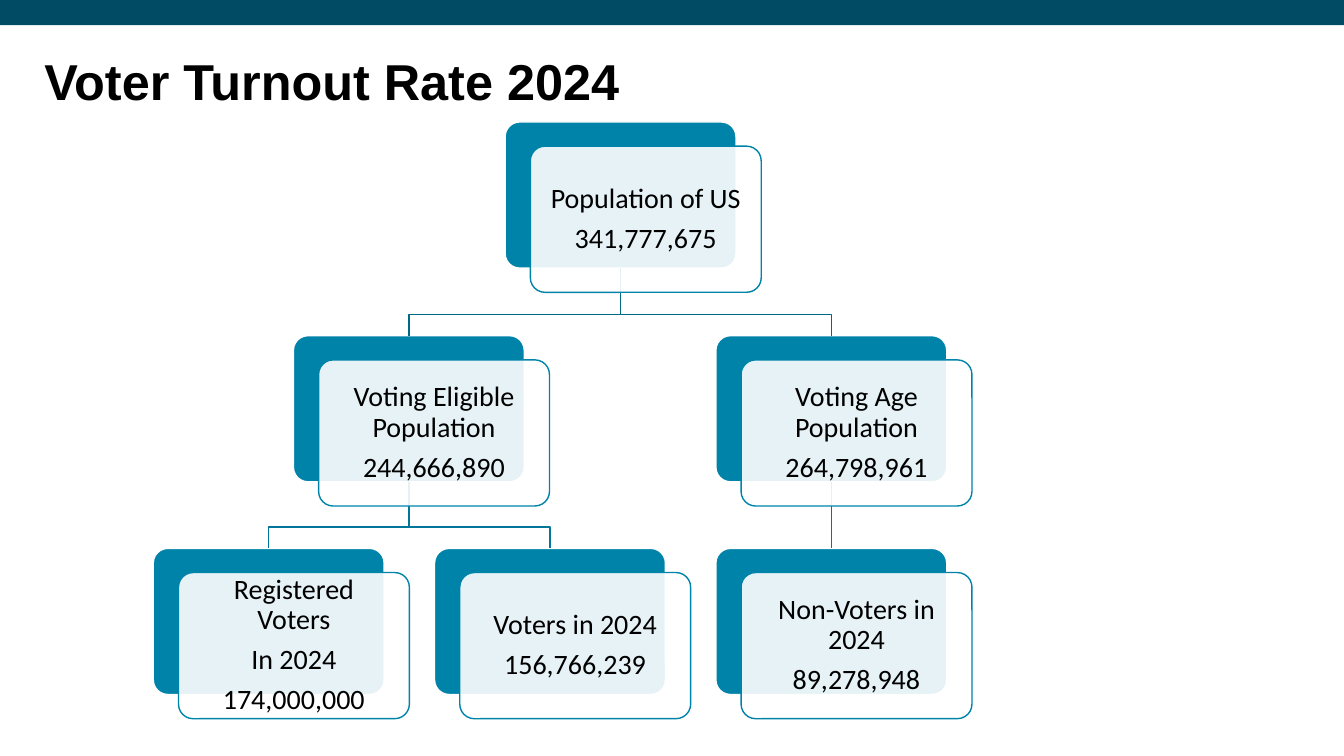
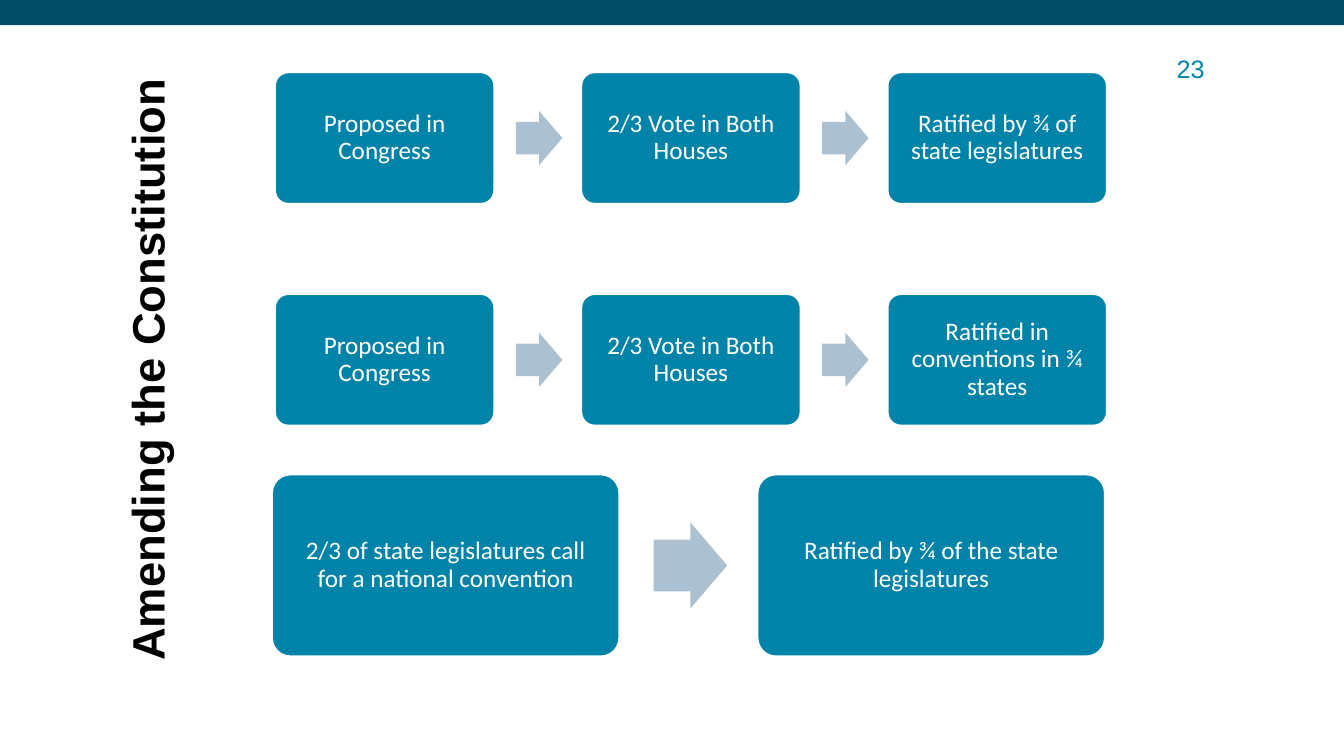
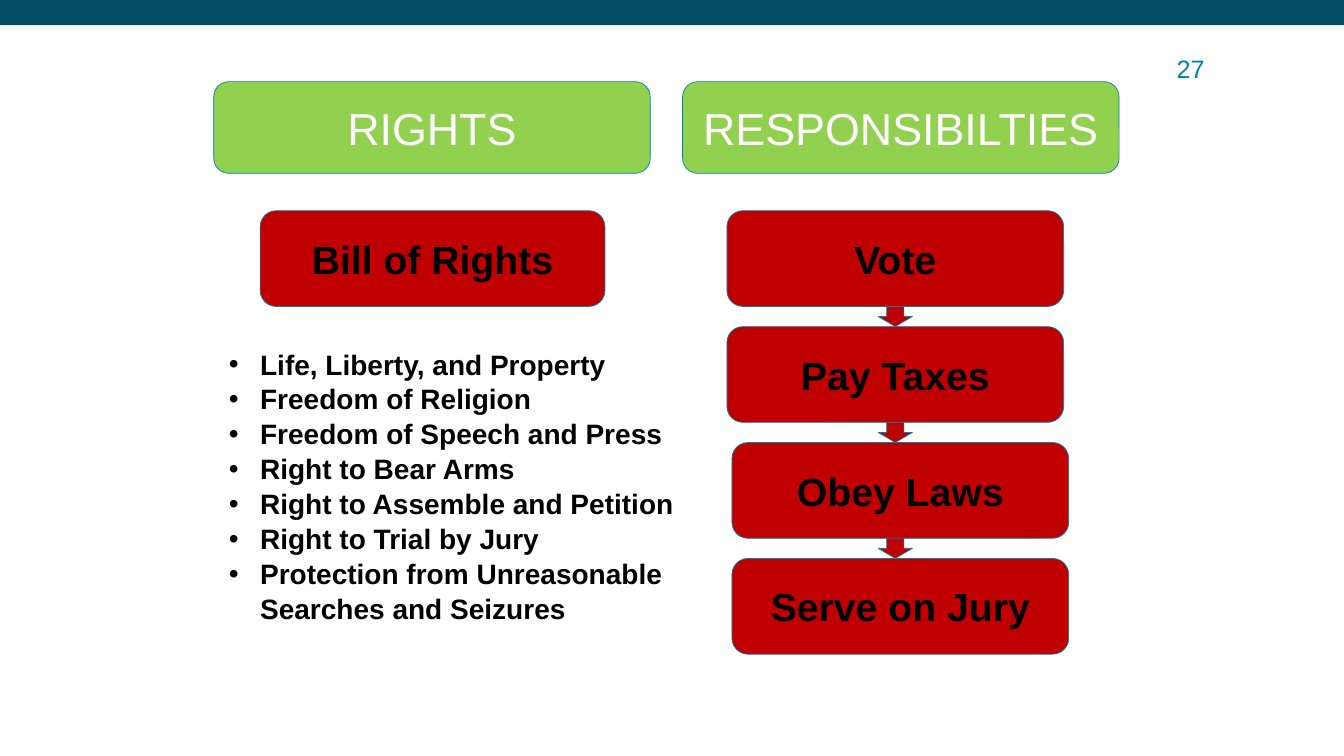
from lxml import etree
from pptx import Presentation
from pptx.dml.color import RGBColor
from pptx.enum import shapes as sh, text as tx
from pptx.oxml.ns import qn
from pptx.util import Inches, Pt

COLORS = {
    "band": "014B64", "teal": "0083A9", "number": "0084A9",
    "link_upper": "006987", "link_lower": "007799", "arrow": "ABC1D1",
    "green": "92D050", "red": "C00000", "white": "FFFFFF", "black": "000000",
}
ROUND = sh.MSO_SHAPE.ROUNDED_RECTANGLE
CENTER = tx.PP_ALIGN.CENTER


def rgb(name):
    return RGBColor.from_string(COLORS[name])


# Shared elements

def write(frame, lines, size, color="black", font="Arial", bold=False,
          align=CENTER, spacing=None, gap=0, inset=None,
          anchor=tx.MSO_ANCHOR.MIDDLE):
    """Fill a text frame with one paragraph per line."""
    frame.word_wrap = True
    frame.auto_size = tx.MSO_AUTO_SIZE.NONE
    frame.vertical_anchor = anchor
    if inset is not None:
        frame.margin_left = frame.margin_right = Inches(inset)
        frame.margin_top = frame.margin_bottom = Inches(inset)
    frame.text = "\n".join(lines)
    for index, paragraph in enumerate(frame.paragraphs):
        paragraph.alignment = align
        paragraph.line_spacing = spacing
        paragraph.space_before = Pt(gap if index else 0)
        paragraph.font.name = font
        paragraph.font.size = Pt(size)
        paragraph.font.bold = bold
        paragraph.font.color.rgb = rgb(color)


def place(shape, left, top, width, height):
    shape.left, shape.top = Inches(left), Inches(top)
    shape.width, shape.height = Inches(width), Inches(height)


def add_block(slide, kind, left, top, width, height, fill,
              line=None, weight=1, adjust=()):
    block = slide.shapes.add_shape(kind, Inches(left), Inches(top),
                                   Inches(width), Inches(height))
    block.shadow.inherit = False
    block.fill.solid()
    block.fill.fore_color.rgb = rgb(fill)
    if line:
        block.line.color.rgb = rgb(line)
        block.line.width = Pt(weight)
    else:
        block.line.fill.background()
    for index, value in enumerate(adjust):
        block.adjustments[index] = value
    return block


def add_band(prs, slide):
    """Put the top band on the master, behind its placeholders."""
    band = add_block(slide, sh.MSO_SHAPE.RECTANGLE, 0, 0, 13.33, 0.25, "band")
    band._element.nvSpPr.cNvPr.set("id", "100")
    prs.slide_master.element.cSld.spTree.insert(2, band._element)


def set_title(slide, words, box, size, align, rotation=0):
    title = slide.shapes.title
    place(title, *box)
    title.rotation = rotation
    write(title.text_frame, [words], size, bold=True, align=align,
          spacing=0.9, inset=0, anchor=tx.MSO_ANCHOR.TOP)


def add_number(slide, number):
    box = slide.shapes.add_textbox(Inches(11.56), Inches(0.48),
                                   Inches(0.5), Inches(0.35))
    write(box.text_frame, [number], 18, "number", inset=0,
          anchor=tx.MSO_ANCHOR.BOTTOM)


# Voter tree

NODE_W, NODE_H = 2.29, 1.45


def add_card(slide, left, top, lines):
    card = add_block(slide, ROUND, left + 0.25, top + 0.24, NODE_W, NODE_H,
                     "white", "teal", adjust=[0.1])
    tint = card._element.spPr.find(qn("a:solidFill"))[0]
    etree.SubElement(tint, qn("a:alpha")).set("val", "90000")
    write(card.text_frame, lines, 20, font="Calibri", spacing=0.9, gap=7,
          inset=0.12)


def add_link(slide, parent, child, color):
    """Join the bottom of one box to the top of another."""
    start_x, start_y = parent.left + parent.width // 2, parent.top + parent.height
    end_x, end_y = child.left + child.width // 2, child.top
    if start_x == end_x:
        link = slide.shapes.add_connector(sh.MSO_CONNECTOR.STRAIGHT,
                                          start_x, start_y, end_x, end_y)
        link.begin_connect(parent, 2)
        link.end_connect(child, 0)
        etree.SubElement(link._element.spPr, qn("a:effectLst"))
    else:
        bend_y = end_y - Inches(0.21)
        builder = slide.shapes.build_freeform(start_x, start_y)
        builder.add_line_segments([(start_x, bend_y), (end_x, bend_y),
                                   (end_x, end_y)], close=False)
        link = builder.convert_to_shape()
        link.shadow.inherit = False
        link.fill.background()
    link.line.color.rgb = rgb(color)
    link.line.width = Pt(1)


def build_turnout(slide):
    set_title(slide, "Voter Turnout Rate 2024", (0.44, 0.57, 12.41, 1.27),
              36, tx.PP_ALIGN.LEFT)
    levels = [1.21, 3.33, 5.44]
    # key: left, level, parent, lines
    nodes = {
        "population": (5.01, 0, None, ["Population of US", "341,777,675"]),
        "eligible": (2.91, 1, "population",
                     ["Voting Eligible Population", "244,666,890"]),
        "registered": (1.52, 2, "eligible",
                       ["Registered Voters", "In 2024", "174,000,000"]),
        "voters": (4.31, 2, "eligible", ["Voters in 2024", "156,766,239"]),
        "age": (7.1, 1, "population", ["Voting Age Population", "264,798,961"]),
        "non_voters": (7.1, 2, "age", ["Non-Voters in 2024", "89,278,948"]),
    }
    backs = {key: add_block(slide, ROUND, left, levels[level], NODE_W, NODE_H,
                            "teal", "white", adjust=[0.1])
             for key, (left, level, _, _) in nodes.items()}
    for key, (_, level, parent, _) in nodes.items():
        if parent:
            add_link(slide, backs[parent], backs[key],
                     "link_upper" if level == 1 else "link_lower")
    for left, level, _, lines in nodes.values():
        add_card(slide, left, levels[level], lines)


# Amendment routes

def add_route(slide, left, top, width, height, steps):
    """Row of boxes with arrows; gaps and arrows scale with box width."""
    for index, step in enumerate(steps):
        x = left + index * 1.4 * width
        box = add_block(slide, ROUND, x, top, width, height, "teal", "white",
                        adjust=[0.1])
        write(box.text_frame, [step], 18, "white", "Calibri", spacing=0.9,
              inset=0.11)
        if index < len(steps) - 1:
            arrow_h = 0.248 * width
            add_block(slide, sh.MSO_SHAPE.RIGHT_ARROW, x + 1.1 * width,
                      top + (height - arrow_h) / 2, 0.212 * width, arrow_h,
                      "arrow", adjust=[0.6, 0.5])


def build_amending(slide):
    set_title(slide, "Amending the Constitution", (-1.5, 3.22, 6.39, 0.9),
              32.4, CENTER, rotation=270)
    add_number(slide, "23")
    opening = ["Proposed in Congress", "2/3 Vote in Both Houses"]
    add_route(slide, 2.73, 0.72, 2.17, 1.3,
              opening + ["Ratified by ¾ of state legislatures"])
    add_route(slide, 2.73, 2.92, 2.17, 1.3,
              opening + ["Ratified in conventions in ¾ states"])
    add_route(slide, 2.7, 4.71, 3.44, 1.8,
              ["2/3 of state legislatures call for a national convention",
               "Ratified by ¾ of the state legislatures"])


# Rights and responsibilities

def add_heading(slide, left, words):
    heading = add_block(slide, ROUND, left, 0.81, 4.33, 0.91, "green", "teal", 0.5)
    write(heading.text_frame, [words], 32, "white")


def add_duty(slide, left, top, width, words):
    duty = add_block(slide, ROUND, left, top, width, 0.95, "red", "teal", 0.5)
    write(duty.text_frame, [words], 28, bold=True)


def build_rights(slide):
    title = slide.shapes.title._element
    title.getparent().remove(title)
    add_heading(slide, 2.12, "RIGHTS")
    add_heading(slide, 6.77, "RESPONSIBILTIES")
    add_duty(slide, 2.58, 2.09, 3.42, "Bill of Rights")

    rights = slide.placeholders[1]
    place(rights, 2.17, 3.38, 4.65, 2.79)
    write(rights.text_frame,
          ["Life, Liberty, and Property", "Freedom of Religion",
           "Freedom of Speech and Press", "Right to Bear Arms",
           "Right to Assemble and Petition", "Right to Trial by Jury",
           "Protection from Unreasonable Searches and Seizures"],
          20, bold=True, align=tx.PP_ALIGN.LEFT, spacing=1.04,
          anchor=tx.MSO_ANCHOR.TOP)
    for paragraph in rights.text_frame.paragraphs:
        indent = paragraph._p.get_or_add_pPr()
        indent.set("marL", str(Inches(0.31)))
        indent.set("indent", str(-Inches(0.31)))

    duties = [(7.21, "Vote"), (7.21, "Pay Taxes"),
              (7.26, "Obey Laws"), (7.26, "Serve on Jury")]
    for index, (left, words) in enumerate(duties):
        top = 2.09 + 1.15 * index
        add_duty(slide, left, top, 3.34, words)
        if index < len(duties) - 1:
            add_block(slide, sh.MSO_SHAPE.DOWN_ARROW, 8.71, top + 0.95,
                      0.34, 0.2, "red", "teal", 0.5)
    add_number(slide, "27")


def main():
    prs = Presentation()
    prs.slide_width, prs.slide_height = Inches(13.33), Inches(7.5)
    title_only, title_and_body = prs.slide_layouts[5], prs.slide_layouts[1]
    turnout = prs.slides.add_slide(title_only)
    add_band(prs, turnout)
    build_turnout(turnout)
    build_amending(prs.slides.add_slide(title_only))
    build_rights(prs.slides.add_slide(title_and_body))
    prs.save("out.pptx")


if __name__ == "__main__":
    main()
